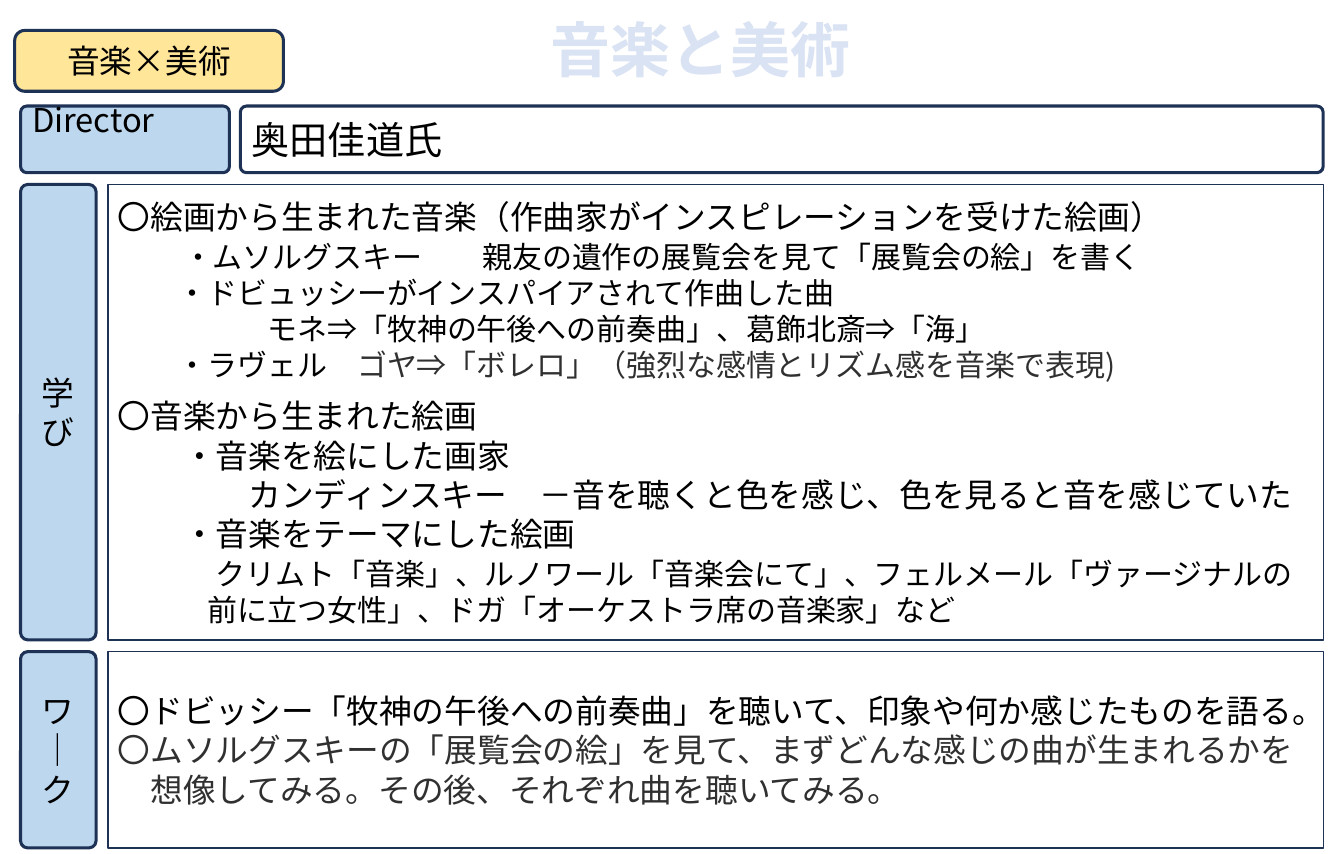
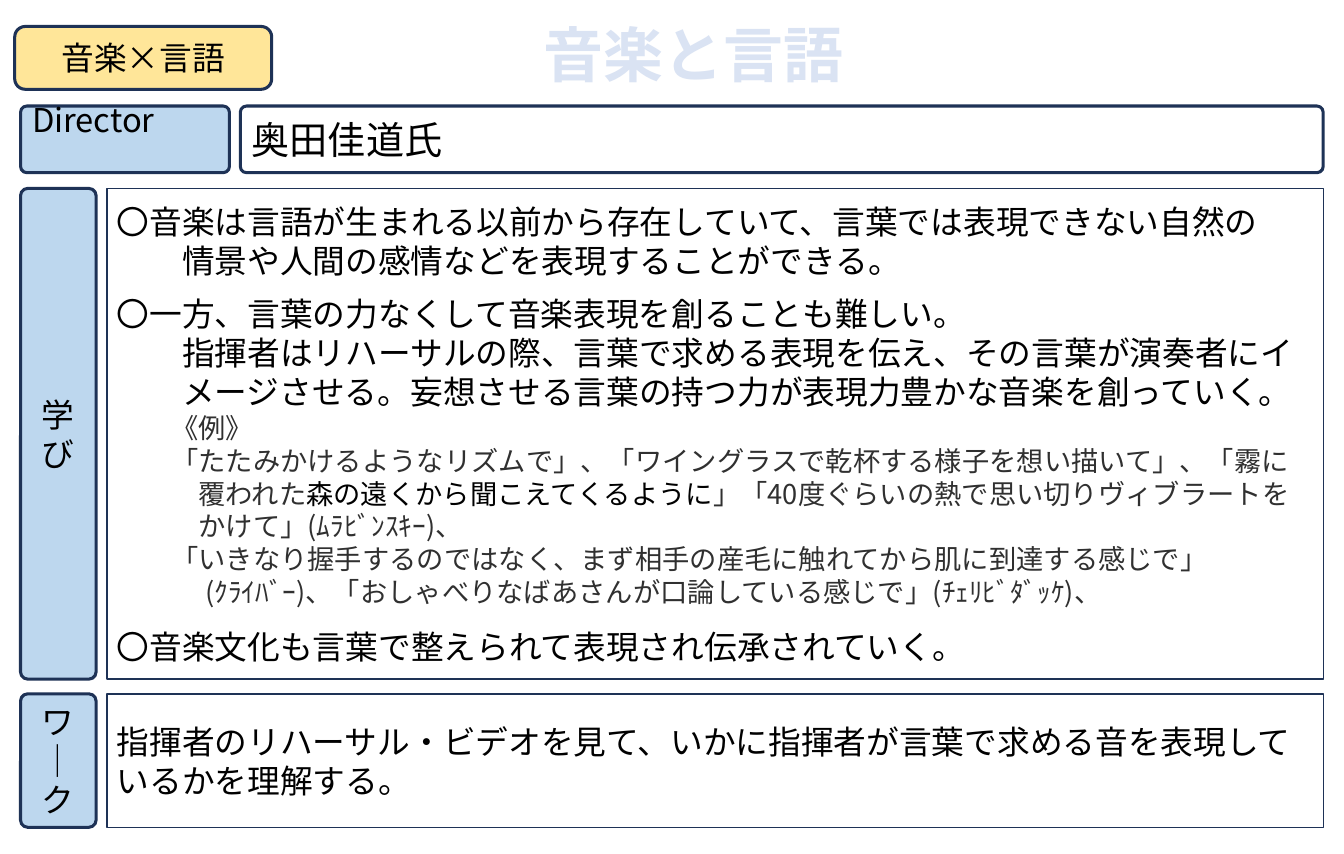
from dataclasses import dataclass

from lxml import etree
from pptx import Presentation
from pptx.dml.color import RGBColor as RGB
from pptx.enum.lang import MSO_LANGUAGE_ID as LANG
from pptx.enum.shapes import MSO_SHAPE as SHAPE
from pptx.enum.text import MSO_ANCHOR as ANCHOR, MSO_AUTO_SIZE as FIT, PP_ALIGN as ALIGN
from pptx.oxml.ns import qn
from pptx.util import Pt

SLIDE_W, SLIDE_H = 12528550, 7956550  # EMU, 34.8 by 22.1 cm
PX = 9144  # EMU in one px, 100 px to the inch
FONT = "Noto Sans CJK JP"
LEADING = 1.2

NAVY = RGB(0x1E, 0x32, 0x56)
BLUE = RGB(0xBD, 0xD7, 0xEE)
PALE = RGB(0xDA, 0xE3, 0xF3)
YELLOW = RGB(0xFF, 0xE6, 0x99)
WHITE = RGB(0xFF, 0xFF, 0xFF)
BLACK = RGB(0, 0, 0)
GRAY = RGB(0x30, 0x30, 0x30)

LABEL_X, LABEL_W = 21, 77
BODY_RIGHT = 1349


@dataclass
class Para:
    """Runs are (text, colour) or (text, colour, extra letter spacing in pt);
    indent counts characters and before is in points."""
    runs: list
    size: int = 24
    indent: float = 0
    before: int = 0
    align: ALIGN = ALIGN.LEFT
    bold: bool = False


def line(text, size=24, indent=0, before=0, color=BLACK):
    return Para([(text, color)], size, indent, before)


def centered(text, size=24, color=BLACK, bold=False):
    return Para([(text, color)], size, align=ALIGN.CENTER, bold=bold)


def add_run(p, para, text, color, spacing=0):
    r = p.add_run()
    r.text = text
    f = r.font
    f.size, f.bold, f.name = Pt(para.size), para.bold, FONT
    f.color.rgb = color
    f.language_id = LANG.JAPANESE
    rPr = r._r.get_or_add_rPr()
    etree.SubElement(rPr, qn("a:ea"), typeface=FONT)
    if spacing:
        rPr.set("spc", str(spacing * 100))


def write(sp, paras):
    tf = sp.text_frame
    tf.word_wrap = True
    tf.auto_size = FIT.NONE
    tf.vertical_anchor = ANCHOR.MIDDLE
    for i, para in enumerate(paras):
        p = tf.add_paragraph() if i else tf.paragraphs[0]
        p.alignment = para.align
        p.line_spacing = Pt(para.size * LEADING)
        p.space_before, p.space_after = Pt(para.before), Pt(0)
        pPr = p._p.get_or_add_pPr()
        pPr.set("marL", str(Pt(para.size * para.indent)))
        pPr.set("indent", "0")
        etree.SubElement(pPr, qn("a:buNone"))
        for run in para.runs:
            add_run(p, para, *run)


def place(sp, x, y, w, h):
    sp.left, sp.top, sp.width, sp.height = (v * PX for v in (x, y, w, h))


def add_card(slide, box, fill, para, radius=0.095):
    sp = slide.shapes.add_shape(SHAPE.ROUNDED_RECTANGLE, *(v * PX for v in box))
    sp.adjustments[0] = radius
    sp.shadow.inherit = False
    sp.fill.solid()
    sp.fill.fore_color.rgb = fill
    sp.line.color.rgb, sp.line.width = NAVY, Pt(2.25)
    write(sp, [para])
    return sp


def add_header(slide, title, title_at, badge, badge_box):
    place(slide.shapes.title, *title_at, 400, 80)
    write(slide.shapes.title, [centered(title, 44, PALE, bold=True)])
    add_card(slide, badge_box, YELLOW, centered(badge), radius=0.167)


def add_director(slide, y=108, h=68):
    label = add_card(slide, (LABEL_X, y, 213, h), BLUE, line("Director"))
    label.text_frame.margin_top = 0
    label.text_frame.margin_bottom = 40 * PX  # lifts the word to the top edge
    add_card(slide, (245, y, 1104, h), WHITE, line("奥田佳道氏", 28))


def add_section(slide, body, label, paras, x, y, h):
    """A narrow label beside an outlined body placeholder."""
    add_card(slide, (LABEL_X, y, LABEL_W, h), BLUE, centered(label))
    place(body, x, y, BODY_RIGHT - x, h)
    body.line.color.rgb, body.line.width = NAVY, Pt(1)
    write(body, paras)


def add_lesson(prs, title, title_at, badge, badge_box, body_x, study, work):
    """study and work are (top, height, paragraphs)."""
    slide = prs.slides.add_slide(prs.slide_layouts.get_by_name("Two Content"))
    add_header(slide, title, title_at, badge, badge_box)
    add_director(slide)
    for idx, label, (y, h, paras) in ((1, "学び", study), (2, "ワ│ク", work)):
        add_section(slide, slide.placeholders[idx], label, paras, body_x, y, h)


ART_STUDY = [
    line("〇絵画から生まれた音楽（作曲家がインスピレーションを受けた絵画）"),
    Para([("・ムソルグスキー", BLACK), ("　", BLACK, 22),
          ("親友の遺作の展覧会を見て「展覧会の絵」を書く", BLACK)], 22, 2.18, before=2),
    line("・ドビュッシーがインスパイアされて作曲した曲", 22, 2),
    line("モネ⇒「牧神の午後への前奏曲」、葛飾北斎⇒「海」", 22, 5),
    Para([("・ラヴェル　", BLACK),
          ("ゴヤ⇒「ボレロ」（強烈な感情とリズム感を音楽で表現)", GRAY)], 22, 2),
    line("〇音楽から生まれた絵画", before=10),
    line("・音楽を絵にした画家", indent=2),
    line("カンディンスキー　－音を聴くと色を感じ、色を見ると音を感じていた", indent=4),
    line("・音楽をテーマにした絵画", indent=2),
    line("クリムト「音楽」、ルノワール「音楽会にて」、フェルメール「ヴァージナルの",
         22, 3.27, before=2),
    line("前に立つ女性」、ドガ「オーケストラ席の音楽家」など", 22, 3),
]
ART_WORK = [
    line("〇ドビッシー「牧神の午後への前奏曲」を聴いて、印象や何か感じたものを語る。"),
    line("〇ムソルグスキーの「展覧会の絵」を見て、まずどんな感じの曲が生まれるかを", color=GRAY),
    line("想像してみる。その後、それぞれ曲を聴いてみる。", indent=1, color=GRAY),
]
LANGUAGE_STUDY = [
    line("〇音楽は言語が生まれる以前から存在していて、言葉では表現できない自然の"),
    line("情景や人間の感情などを表現することができる。", indent=2),
    line("〇一方、言葉の力なくして音楽表現を創ることも難しい。", before=10),
    line("指揮者はリハーサルの際、言葉で求める表現を伝え、その言葉が演奏者にイ", indent=2),
    line("メージさせる。妄想させる言葉の持つ力が表現力豊かな音楽を創っていく。", indent=2),
    line("《例》", 20, 2, color=GRAY),
    line("「たたみかけるようなリズムで」、「ワイングラスで乾杯する様子を想い描いて」、「霧に",
         20, 2, color=GRAY),
    Para([("覆われた", GRAY), ("森の遠くから聞こえてくるように", BLACK),
          ("」「40度ぐらいの熱で思い切りヴィブラートを", GRAY)], 20, 3),
    line("かけて」(ﾑﾗﾋﾞﾝｽｷｰ)、", 20, 3, color=GRAY),
    line("「いきなり握手するのではなく、まず相手の産毛に触れてから肌に到達する感じで」",
         20, 2, color=GRAY),
    line("(ｸﾗｲﾊﾞｰ)、「おしゃべりなばあさんが口論している感じで」(ﾁｪﾘﾋﾞﾀﾞｯｹ)、",
         20, 3.25, color=GRAY),
    line("〇音楽文化も言葉で整えられて表現され伝承されていく。", before=14),
]
LANGUAGE_WORK = [
    line("指揮者のリハーサル・ビデオを見て、いかに指揮者が言葉で求める音を表現して"),
    line("いるかを理解する。"),
]


def main():
    prs = Presentation()
    prs.slide_width = SLIDE_W
    prs.slide_height = SLIDE_H
    add_lesson(prs, "音楽と美術", (514, 9), "音楽×美術", (15, 31, 274, 62), 110,
               (188, 464, ART_STUDY), (664, 200, ART_WORK))
    add_lesson(prs, "音楽と言語", (507, 14), "音楽×言語", (15, 27, 262, 64), 109,
               (192, 500, LANGUAGE_STUDY), (707, 136, LANGUAGE_WORK))
    prs.save("out.pptx")


if __name__ == "__main__":
    main()
